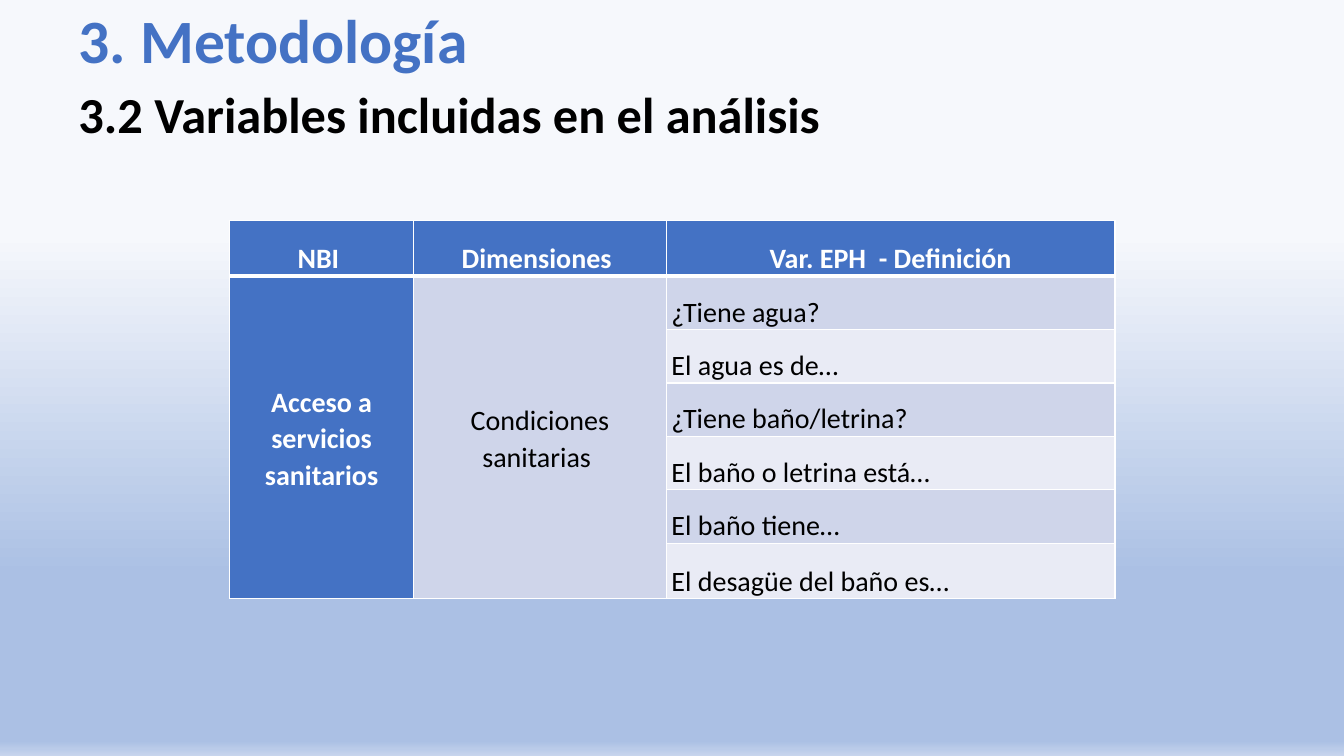
from dataclasses import dataclass

from lxml import etree
from pptx import Presentation
from pptx.dml.color import RGBColor
from pptx.enum.text import MSO_ANCHOR, PP_ALIGN
from pptx.oxml.ns import qn
from pptx.util import Inches, Pt

MIDDLE, BOTTOM = MSO_ANCHOR.MIDDLE, MSO_ANCHOR.BOTTOM
LEFT, CENTER = PP_ALIGN.LEFT, PP_ALIGN.CENTER


@dataclass(frozen=True)
class Theme:
    font: str = "Calibri"
    accent: str = "4472C4"
    black: str = "000000"
    white: str = "FFFFFF"
    band_dark: str = "CFD5EA"
    band_light: str = "E9EBF5"
    title_size: int = 44
    subtitle_size: int = 36
    table_size: int = 20
    background: tuple = ((31, "F6F8FC"), (76, "ABC0E4"), (98, "ABC0E4"), (100, "C7D5ED"))


theme = Theme()


def write_text(text_frame, text, size, color, bold, anchor, align=LEFT, spacing=0.9):
    text_frame.text = text
    text_frame.word_wrap = True
    text_frame.vertical_anchor = anchor
    paragraph = text_frame.paragraphs[0]
    paragraph.alignment = align
    paragraph.line_spacing = spacing
    font = paragraph.runs[0].font
    font.name, font.size, font.bold = theme.font, Pt(size), bold
    font.color.rgb = RGBColor.from_string(color)


def style_cell(cell, fill, top_width, bottom_width):
    cell.margin_left = cell.margin_right = Inches(0.05)
    cell.margin_top, cell.margin_bottom = Inches(0.01), 0
    properties = cell._tc.get_or_add_tcPr()
    for side, width in (("L", 1), ("R", 1), ("T", top_width), ("B", bottom_width)):
        line = etree.SubElement(properties, qn(f"a:ln{side}"), w=str(Pt(width)))
        solid = etree.SubElement(line, qn("a:solidFill"))
        etree.SubElement(solid, qn("a:srgbClr"), val=theme.white)
    cell.fill.solid()
    cell.fill.fore_color.rgb = RGBColor.from_string(fill)


presentation = Presentation()
presentation.slide_width, presentation.slide_height = Inches(13.33), Inches(7.5)
slide = presentation.slides.add_slide(presentation.slide_layouts.get_by_name("Title Only"))

# Background: vertical gradient with four stops
slide.background.fill.gradient()
gradient = slide.element.find(".//" + qn("a:gradFill"))
for child in list(gradient):
    gradient.remove(child)
stops = etree.SubElement(gradient, qn("a:gsLst"))
for percent, color in theme.background:
    stop = etree.SubElement(stops, qn("a:gs"), pos=str(percent * 1000))
    etree.SubElement(stop, qn("a:srgbClr"), val=color)
etree.SubElement(gradient, qn("a:lin"), ang=str(90 * 60000), scaled="0")

# Title and subtitle share one left edge and width
heading_left, heading_width = Inches(0.68), Inches(11.5)
title = slide.shapes.title
title.left, title.top = heading_left, Inches(-0.29)
title.width, title.height = heading_width, Inches(1.45)
write_text(title.text_frame, "3. Metodología", theme.title_size, theme.accent, True, MIDDLE)

subtitle = slide.shapes.add_textbox(heading_left, Inches(0.74), heading_width, Inches(0.85))
write_text(subtitle.text_frame, "3.2 Variables incluidas en el análisis",
           theme.subtitle_size, theme.black, True, MIDDLE)

# Table grid
headers = ["NBI ", "Dimensiones ", "Var. EPH  - Definición"]
questions = ["¿Tiene agua?", "El agua es de…", "¿Tiene baño/letrina?",
             "El baño o letrina está…", "El baño tiene…", "El desagüe del baño es…"]
column_widths = [1.82, 2.51, 4.45]
row_heights = [0.55] + [0.53] * 5 + [0.55]
last_row = len(questions)
table = slide.shapes.add_table(
    len(row_heights), len(column_widths), Inches(2.28), Inches(2.19),
    Inches(sum(column_widths)), Inches(sum(row_heights))).table
for column, width in zip(table.columns, column_widths):
    column.width = Inches(width)
for row, height in zip(table.rows, row_heights):
    row.height = Inches(height)

# Cell fills and borders, with a thick line under the header
for row in range(len(row_heights)):
    band = theme.band_dark if row % 2 else theme.band_light
    fills = [theme.accent] * 3 if row == 0 else [theme.accent, theme.band_dark, band]
    for column, fill in enumerate(fills):
        style_cell(table.cell(row, column), fill, 3 if row == 1 else 1, 3 if row == 0 else 1)
for column in (0, 1):
    table.cell(1, column).merge(table.cell(last_row, column))

# Cell wording: row, column, text, colour, bold, anchor, alignment
entries = [(0, column, text, theme.white, True, BOTTOM, CENTER)
           for column, text in enumerate(headers)]
entries += [(1, 0, "Acceso a servicios sanitarios", theme.white, True, MIDDLE, CENTER),
            (1, 1, "Condiciones sanitarias ", theme.black, False, MIDDLE, CENTER)]
entries += [(row, 2, text, theme.black, False, BOTTOM, LEFT)
            for row, text in enumerate(questions, start=1)]
for row, column, text, color, bold, anchor, align in entries:
    cell = table.cell(row, column)
    write_text(cell.text_frame, text, theme.table_size, color, bold, anchor, align, 1.07)
    cell.vertical_anchor = anchor
    cell.text_frame.paragraphs[0].space_after = Pt(8)

presentation.save("out.pptx")
